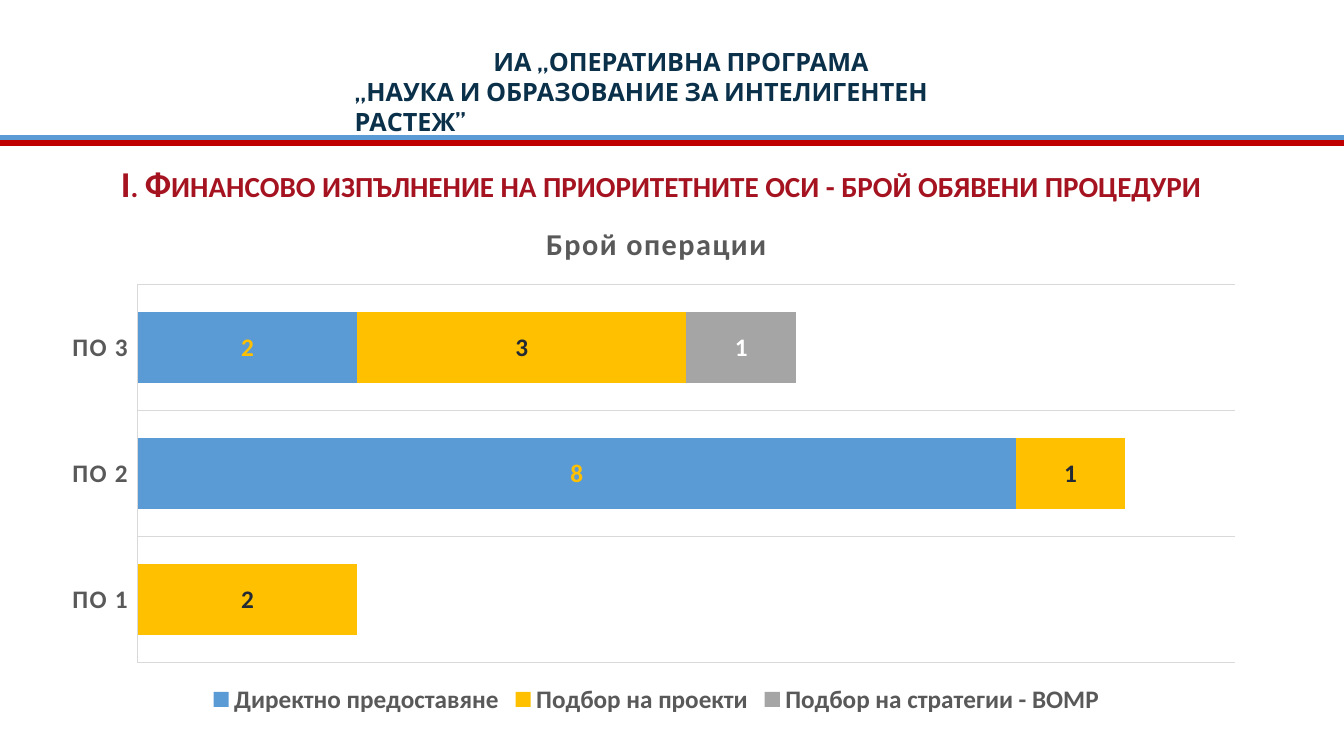
from pptx import Presentation
from pptx.chart.data import CategoryChartData
from pptx.dml.color import RGBColor
from pptx.enum.chart import XL_CHART_TYPE as ChartType, XL_LABEL_POSITION as LabelPos
from pptx.enum.chart import XL_LEGEND_POSITION as LegendPos, XL_TICK_MARK as TickMark
from pptx.enum.chart import XL_TICK_LABEL_POSITION as TickLabelPos
from pptx.enum.text import MSO_ANCHOR as Anchor, PP_ALIGN as Align
from pptx.oxml import parse_xml
from pptx.oxml.ns import nsdecls
from pptx.util import Inches, Pt

BLUE = RGBColor(0x5B, 0x9B, 0xD5)
GOLD = RGBColor(0xFF, 0xC0, 0x00)
GREY = RGBColor(0xA5, 0xA5, 0xA5)
RED = RGBColor(0xC0, 0x00, 0x00)
CRIMSON = RGBColor(0xA5, 0x13, 0x21)
NAVY = RGBColor(0x0A, 0x30, 0x4A)
SLATE = RGBColor(0x22, 0x2A, 0x35)
TEXT_GREY = RGBColor(0x59, 0x59, 0x59)
LINE_GREY = RGBColor(0xD9, 0xD9, 0xD9)
WHITE = RGBColor(0xFF, 0xFF, 0xFF)

SLIDE_WIDTH = 13.33


class SlideBuilder:
    body_font = "Calibri"
    header_font = "Cabin"

    def __init__(self, slide):
        self.slide = slide

    def style(self, font, size, color, name=body_font):
        font.name, font.size, font.bold = name, Pt(size), True
        font.color.rgb = color

    def rule(self, y, color):
        line = self.slide.shapes.add_connector(
            1, Inches(0), Inches(y), Inches(SLIDE_WIDTH), Inches(y))
        line.line.color.rgb = color
        line.line.width = Pt(3.75)
        line._element.spPr.append(parse_xml(f"<a:effectLst {nsdecls('a')}/>"))

    def text(self, box, lines, size, color, name=body_font, anchor=Anchor.TOP):
        frame = self.slide.shapes.add_textbox(*map(Inches, box)).text_frame
        frame.word_wrap = True
        frame.vertical_anchor = anchor
        frame.text = "\n".join(lines)
        for paragraph in frame.paragraphs:
            for run in paragraph.runs:
                self.style(run.font, size, color, name)
        return frame.paragraphs

    def stacked_bars(self, box, title, categories, series):
        data = CategoryChartData()
        data.categories = categories
        for name, values, _, _ in series:
            data.add_series(name, values)
        chart = self.slide.shapes.add_chart(
            ChartType.BAR_STACKED, *map(Inches, box), data).chart
        self.style(chart.font, 18, TEXT_GREY)

        # Chart title
        chart.has_title = True
        heading = chart.chart_title.text_frame
        heading.text = title
        run = heading.paragraphs[0].runs[0]
        self.style(run.font, 21.6, TEXT_GREY)
        run.font._element.set("spc", "100")
        chart.chart_title.include_in_layout = False

        # Legend
        chart.has_legend = True
        chart.legend.position = LegendPos.BOTTOM
        chart.legend.include_in_layout = False
        self.style(chart.legend.font, 18, TEXT_GREY)

        # Axes
        axis = chart.category_axis
        axis.major_tick_mark = axis.minor_tick_mark = TickMark.NONE
        axis.tick_label_position = TickLabelPos.LOW
        axis.has_major_gridlines = True
        for line in (axis.format.line, axis.major_gridlines.format.line):
            line.color.rgb = LINE_GREY
            line.width = Pt(0.75)
        self.style(axis.tick_labels.font, 18, TEXT_GREY)
        axis.tick_labels.font._element.set("spc", "100")
        scale = chart.value_axis
        scale.minimum_scale, scale.maximum_scale = 0, 10
        scale.has_major_gridlines = False
        scale.visible = False

        # Bars and their values
        plot = chart.plots[0]
        plot.gap_width, plot.overlap = 79, 100
        plot.vary_by_categories = False
        for bars, (_, _, fill, label_color) in zip(plot.series, series):
            bars.format.fill.solid()
            bars.format.fill.fore_color.rgb = fill
            labels = bars.data_labels
            labels.show_value = True
            labels.position = LabelPos.CENTER
            self.style(labels.font, 18, label_color)

        # Plot area placement
        area = chart._chartSpace.chart.plotArea
        for layout in area.findall("{*}layout"):
            area.remove(layout)
        places = "".join(f'<c:{key} val="{share}"/>' for key, share in
                         (("x", 0.07), ("y", 0.16), ("w", 0.91), ("h", 0.73)))
        area.insert(0, parse_xml(
            f'<c:layout {nsdecls("c")}><c:manualLayout><c:layoutTarget val="inner"/>'
            f'<c:xMode val="edge"/><c:yMode val="edge"/>{places}'
            '</c:manualLayout></c:layout>'))


def main():
    deck = Presentation()
    deck.slide_width, deck.slide_height = Inches(SLIDE_WIDTH), Inches(7.5)
    builder = SlideBuilder(deck.slides.add_slide(deck.slide_layouts[6]))

    # Header with its two rules
    builder.rule(1.37, BLUE)
    builder.rule(1.42, RED)
    agency = builder.text(
        (3.42, 0.41, 6.67, 0.71),
        ["ИА „ОПЕРАТИВНА ПРОГРАМА", "„НАУКА И ОБРАЗОВАНИЕ ЗА ИНТЕЛИГЕНТЕН РАСТЕЖ”"],
        18, NAVY, builder.header_font)
    agency[0].alignment = Align.CENTER

    # Slide title
    headline = builder.text(
        (1.1, 1.56, 11.95, 0.56),
        ["I. Финансово изпълнение на приоритетните оси - брой обявени процедури"],
        26, CRIMSON, anchor=Anchor.MIDDLE)[0]
    headline.line_spacing = 0.9
    headline.runs[0].font._element.set("cap", "small")

    # Operations by priority axis
    builder.stacked_bars(
        (0.53, 2, 11.96, 5.14), "Брой операции", ["ПО 1", "ПО 2", "ПО 3"],
        [("Директно предоставяне", (None, 8, 2), BLUE, GOLD),
         ("Подбор на проекти", (2, 1, 3), GOLD, SLATE),
         ("Подбор на стратегии - ВОМР", (None, None, 1), GREY, WHITE)])

    deck.save("out.pptx")


if __name__ == "__main__":
    main()
